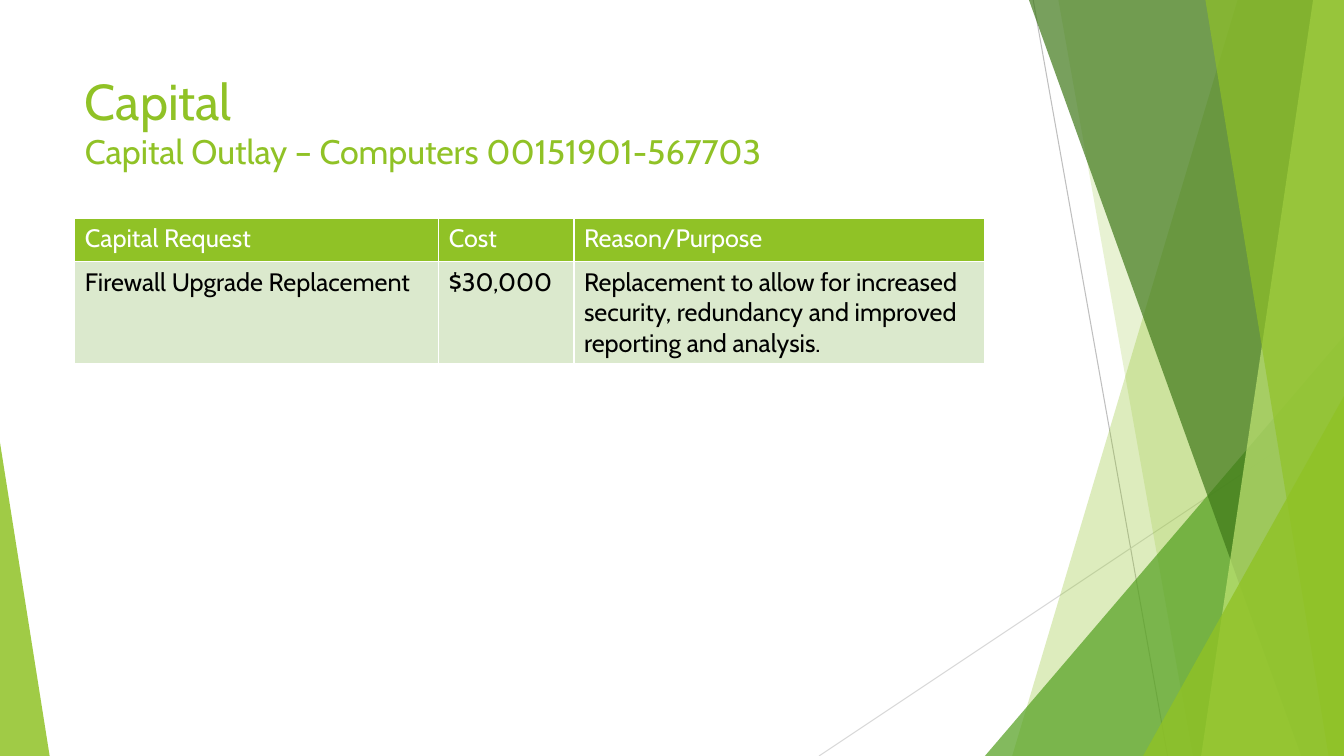
from lxml import etree
from pptx import Presentation
from pptx.dml.color import RGBColor
from pptx.enum.shapes import MSO_CONNECTOR, MSO_SHAPE
from pptx.enum.text import MSO_ANCHOR
from pptx.oxml.ns import qn
from pptx.util import Pt

STRAIGHT = MSO_CONNECTOR.STRAIGHT
TRIANGLE = MSO_SHAPE.ISOSCELES_TRIANGLE
BOTTOM = MSO_ANCHOR.BOTTOM
WIDTH, HEIGHT = 960, 540
COLORS = {
    "lime": "90C226",
    "green": "54A021",
    "forest": "3F7819",
    "pale_lime": "C0E474",
    "row": "DBE9CD",
    "white": "FFFFFF",
    "black": "000000",
    "gray": "BFBFBF",
    "light_gray": "D9D9D9",
}


class SlideBuilder:
    """Holds the slide style and draws each kind of element in points."""

    font = "Cabin"

    def __init__(self, slide):
        self.slide = slide
        self.shapes = slide.shapes

    def color(self, name):
        return RGBColor.from_string(COLORS[name])

    def style_run(self, run, size, color):
        run.font.name = self.font
        run.font.size = Pt(size)
        run.font.color.rgb = self.color(color)

    def paint(self, shape, color, opacity):
        shape.shadow.inherit = False
        shape.line.fill.background()
        shape.fill.solid()
        shape.fill.fore_color.rgb = self.color(color)
        tint = next(shape.element.spPr.iter(qn("a:srgbClr")))
        etree.SubElement(tint, qn("a:alpha"), val=str(opacity * 1000))

    def line(self, x1, y1, x2, y2, color):
        line = self.shapes.add_connector(STRAIGHT, Pt(x1), Pt(y1), Pt(x2), Pt(y2))
        line.line.color.rgb = self.color(color)
        line.line.width = Pt(0.75)
        etree.SubElement(line.element.spPr, qn("a:effectLst"))

    def band(self, top_x, bottom_x, color, opacity):
        outline = self.shapes.build_freeform(Pt(top_x), 0)
        corners = [(WIDTH, 0), (WIDTH, HEIGHT), (bottom_x, HEIGHT)]
        outline.add_line_segments([(Pt(x), Pt(y)) for x, y in corners])
        self.paint(outline.convert_to_shape(), color, opacity)

    def triangle(self, left, top, width, apex, color, opacity):
        triangle = self.shapes.add_shape(
            TRIANGLE, Pt(left), Pt(top), Pt(width), Pt(HEIGHT - top))
        triangle.adjustments[0] = apex
        self.paint(triangle, color, opacity)

    def title(self, left, top, width, height, lines, sizes):
        frame = self.shapes.add_textbox(
            Pt(left), Pt(top), Pt(width), Pt(height)).text_frame
        frame.word_wrap = True
        frame.vertical_anchor = BOTTOM
        paragraph = frame.paragraphs[0]
        paragraph.text = "\v".join(lines)
        for run, size in zip(paragraph.runs, sizes):
            self.style_run(run, size, "lime")

    def cell(self, cell, text, fill, color):
        cell.text_frame.text = text
        self.style_run(cell.text_frame.paragraphs[0].runs[0], 18, color)
        properties = cell._tc.get_or_add_tcPr()
        for side in "LRTB":
            border = etree.SubElement(properties, qn(f"a:ln{side}"), w=str(Pt(1)))
            solid = etree.SubElement(border, qn("a:solidFill"))
            etree.SubElement(solid, qn("a:srgbClr"), val=COLORS["white"])
        cell.fill.solid()
        cell.fill.fore_color.rgb = self.color(fill)

    def table(self, left, top, widths, heights, rows):
        table = self.shapes.add_table(
            len(rows), len(widths), Pt(left), Pt(top),
            Pt(sum(widths)), Pt(sum(heights))).table
        for column, width in zip(table.columns, widths):
            column.width = Pt(width)
        for row, height in zip(table.rows, heights):
            row.height = Pt(height)
        for i, texts in enumerate(rows):
            fill, color = ("row", "black") if i else ("lime", "white")
            for j, text in enumerate(texts):
                self.cell(table.cell(i, j), text, fill, color)


def main():
    deck = Presentation()
    deck.slide_width, deck.slide_height = Pt(WIDTH), Pt(HEIGHT)
    page = SlideBuilder(deck.slides.add_slide(deck.slide_layouts[6]))

    page.line(738, 0, 834, HEIGHT, "gray")
    page.line(WIDTH, 290, 585, HEIGHT, "light_gray")
    page.band(884, 723, "lime", 30)
    page.band(756, 852, "lime", 20)
    page.triangle(703.5, 240, 256.5, 1, "green", 72)
    page.band(735, 929.5, "forest", 70)
    page.band(938, 858, "pale_lime", 70)
    page.band(861, 949, "lime", 65)
    page.triangle(816.5, 283, 143.5, 1, "lime", 80)
    page.triangle(0, 316, 35.5, 0, "lime", 85)

    page.title(53.5, 53.5, 677, 72.5,
               ["Capital", "Capital Outlay – Computers 00151901-567703"],
               [36, 24.3])
    page.table(53.5, 156, [260, 96.5, 293], [31, 73], [
        ["Capital Request", "Cost", "Reason/Purpose"],
        ["Firewall Upgrade Replacement", "$30,000",
         "Replacement to allow for increased security, redundancy "
         "and improved reporting and analysis."],
    ])
    deck.save("out.pptx")


if __name__ == "__main__":
    main()
